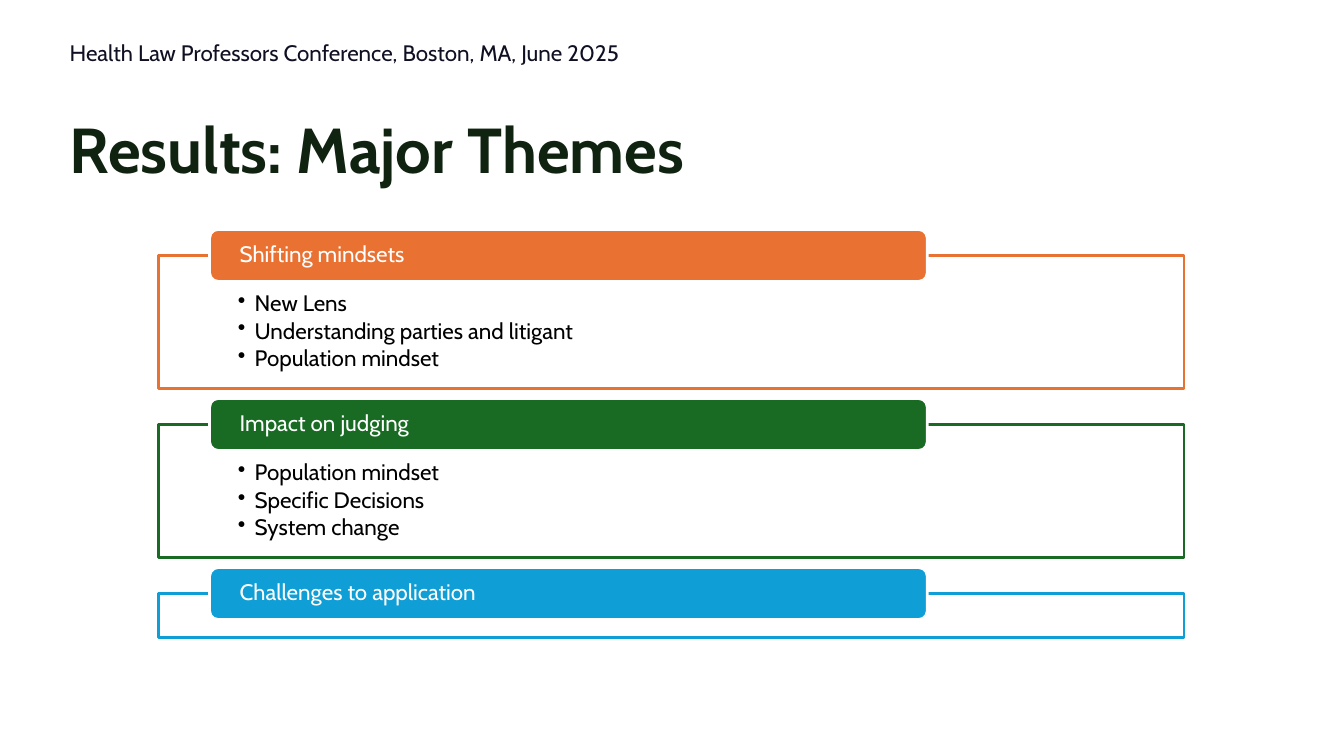
from pptx import Presentation
from pptx.dml.color import RGBColor
from pptx.enum.shapes import MSO_SHAPE
from pptx.enum.text import MSO_ANCHOR, MSO_AUTO_SIZE, PP_ALIGN
from pptx.oxml import parse_xml
from pptx.oxml.ns import nsdecls
from pptx.util import Inches, Pt

THEME = {
    "font": "Cabin", "title": 34, "body": 12, "edge": 1.5,
    "head": "102310", "note": "101023", "text": "000000", "back": "FFFFFF",
    "tones": ["E97132", "196B24", "0F9ED5"],
}
THEMES = [
    ("Shifting mindsets",
     ["New Lens", "Understanding parties and litigant", "Population mindset"]),
    ("Impact on judging",
     ["Population mindset", "Specific Decisions", "System change"]),
    ("Challenges to application", []),
]

deck = Presentation()
deck.slide_width = Inches(10)
deck.slide_height = deck.slide_width * 9 // 16
slide = deck.slides.add_slide(deck.slide_layouts[5])
CELL = deck.slide_width / 100  # square grid, 100 columns across


def grid(*cells):
    return [round(n * CELL) for n in cells]


def write(shape, lines, pads, tone, size=THEME["body"], bold=False,
          anchor=MSO_ANCHOR.MIDDLE, space=1.0, after=0, bullet=False):
    """Fill a shape with paragraphs; pads are left, top, right, bottom in cells."""
    frame = shape.text_frame
    left, top, right, bottom = grid(*pads)
    look = {"word_wrap": True, "auto_size": MSO_AUTO_SIZE.NONE,
            "vertical_anchor": anchor, "margin_left": left,
            "margin_top": top, "margin_right": right, "margin_bottom": bottom}
    for key, value in look.items():
        setattr(frame, key, value)
    for i, line in enumerate(lines):
        para = frame.paragraphs[0] if i == 0 else frame.add_paragraph()
        if bullet:
            props = para._p.get_or_add_pPr()
            props.set("marL", str(Pt(9)))
            props.set("indent", str(-Pt(9)))
            for mark in ("buFontTx", 'buChar char="•"'):
                name, _, rest = mark.partition(" ")
                props.append(parse_xml(f'<a:{name} {nsdecls("a")} {rest}/>'))
        form = {"alignment": PP_ALIGN.LEFT, "line_spacing": space,
                "space_before": Pt(0), "space_after": Pt(after),
                "level": 1 if bullet else 0}
        for key, value in form.items():
            setattr(para, key, value)
        run = para.add_run()
        run.text = line
        for key, value in {"name": THEME["font"], "size": Pt(size), "bold": bold}.items():
            setattr(run.font, key, value)
        run.font.color.rgb = RGBColor.from_string(tone)


# Title and conference line share a left edge
title = slide.shapes.title
title.left, title.top, title.width, title.height = grid(4.2, 7.65, 91.6, 7.2)
write(title, ["Results: Major Themes"], [1] * 4, THEME["head"],
      THEME["title"], True, MSO_ANCHOR.BOTTOM)
venue = slide.shapes.add_textbox(*grid(4.2, 2.3, 45.8, 3.5))
write(venue, ["Health Law Professors Conference, Boston, MA, June 2025"],
      [1] * 4, THEME["note"], space=0.9, after=12)

# Each theme: an outlined box with a tab over its top edge
top = 19
for (name, points), tone in zip(THEMES, THEME["tones"]):
    tall = 3.3 + 2.2 * len(points)
    box = slide.shapes.add_shape(MSO_SHAPE.RECTANGLE, *grid(11.8, top, 76.3, tall))
    tab = slide.shapes.add_shape(MSO_SHAPE.ROUNDED_RECTANGLE,
                                 *grid(15.6, top - 1.93, 53.4, 3.87))
    for shape, fill, edge in [(box, THEME["back"], tone), (tab, tone, THEME["back"])]:
        shape.shadow.inherit = False
        shape.fill.solid()
        shape.fill.fore_color.rgb = RGBColor.from_string(fill)
        shape.line.color.rgb = RGBColor.from_string(edge)
        shape.line.width = Pt(THEME["edge"])
    if points:
        write(box, points, [5.9, 2.75, 5.9, 0.9], THEME["text"],
              anchor=MSO_ANCHOR.TOP, space=0.9, after=1.8, bullet=True)
    write(tab, [name], [2.05, 0, 2.05, 0], THEME["back"], space=0.9)
    top += tall + 2.68

deck.save("out.pptx")
